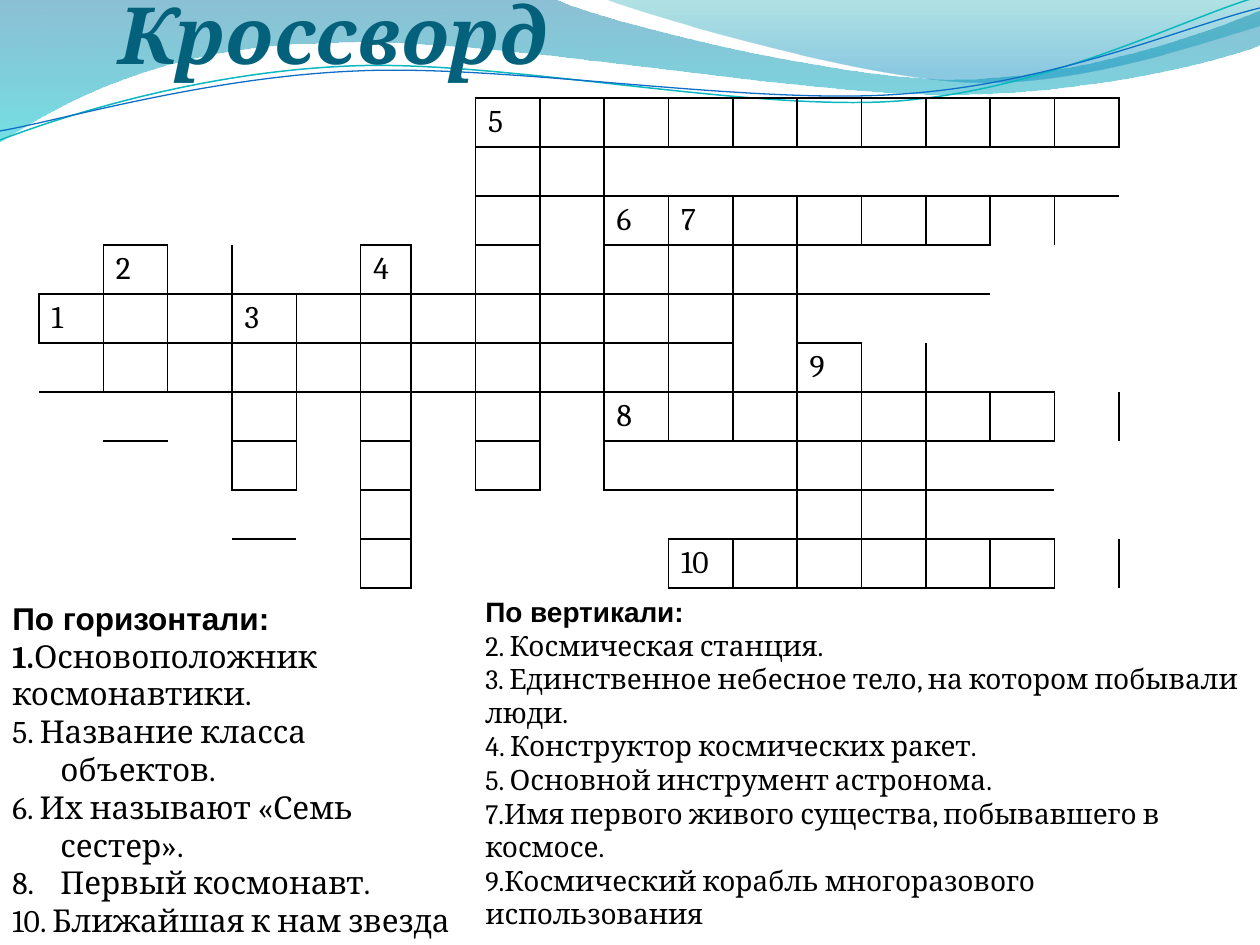
from lxml import etree
from pptx import Presentation
from pptx.dml.color import RGBColor
from pptx.enum.text import MSO_ANCHOR, MSO_AUTO_SIZE, PP_ALIGN
from pptx.oxml.ns import qn
from pptx.util import Emu, Pt

PX = 914400 / 126
BLACK = RGBColor(0x00, 0x00, 0x00)
TITLE = RGBColor(0x04, 0x61, 0x7B)
DEEP_BLUE = RGBColor(0x00, 0x74, 0xA1)
CYAN = RGBColor(0x00, 0xC6, 0xCF)
TEAL = RGBColor(0x00, 0xA1, 0xA9)
SKY = RGBColor(0x00, 0x8B, 0xBF)
LINE_TEAL = RGBColor(0x0A, 0xB8, 0xBF)
LINE_BLUE = RGBColor(0x0F, 0x6F, 0xC6)
NO_GRID_STYLE = "{2D5ABB26-0587-4C30-8999-92F81FD0307C}"

# Outlines: a segment of one point is straight, of three points a Bezier curve
BIG_WAVE = [
    [(0, 0)], [(554, -1)],
    [(600, 21), (837, 79), (955, 79)], [(1075, 79), (1207, 33), (1260, 11)],
    [(1261, 45)],
    [(1239, 55), (1096, 96), (940, 94)], [(784, 94), (481, 35), (324, 43)],
    [(163, 45), (58, 105), (-1, 142)],
]
SMALL_WAVE = [
    [(604, -1)],
    [(641, 14), (859, 78), (969, 82)], [(1079, 87), (1211, 40), (1260, 26)],
    [(1260, 0)],
]
TEAL_CURVE = [
    [(0, 140)], [(60, 117), (199, 72), (349, 66)],
    [(498, 59), (747, 112), (898, 101)], [(1050, 89), (1182, 19), (1257, -3)],
]
BLUE_CURVE = [
    [(0, 131)], [(59, 121), (207, 77), (357, 71)],
    [(508, 64), (752, 106), (903, 94)], [(1053, 84), (1186, 26), (1260, 8)],
]

# Crossword: "#" is a letter square
GRID = [
    ".......##########.",
    ".......#..........",
    ".......#.######...",
    ".#...#.#..#.......",
    "###########.......",
    ".#.#.#.#..#.#.....",
    "...#.#.#.#######..",
    "...#.#.#....#.....",
    ".....#......#.....",
    ".....#....######..",
]
NUMBERS = {(0, 7): "5", (2, 9): "6", (2, 10): "7", (3, 1): "2", (3, 5): "4",
           (4, 0): "1", (4, 3): "3", (5, 12): "9", (6, 9): "8", (9, 10): "10"}
UNEXTENDED = {(0, 17), (8, 6), (8, 7), (9, 6)}

# Clues: bold start, text, hanging indent
ACROSS = [
    ("1.", "Основоположник космонавтики.", False),
    ("", "5. Название класса объектов.", True),
    ("", "6. Их называют «Семь сестер».", True),
    ("", "8.\tПервый космонавт.", True),
    ("", "10. Ближайшая к нам звезда", False),
]
DOWN = [("", text, False) for text in (
    "2. Космическая станция.",
    "3. Единственное небесное тело, на котором побывали люди.",
    "4. Конструктор космических ракет.",
    "5. Основной инструмент астронома.",
    "7.Имя первого живого существа, побывавшего в космосе.",
    "9.Космический корабль многоразового использования",
)]


def px(n):
    return Emu(round(n * PX))


def is_square(row, col):
    return 0 <= row < len(GRID) and 0 <= col < len(GRID[0]) and GRID[row][col] == "#"


def cell_sides(row, col):
    """Sides drawn: around squares, plus the far side of blanks right of or below one."""
    def extends(r, c, dr, dc):
        return (not is_square(r, c) and is_square(r - dr, c - dc)
                and (r, c) not in UNEXTENDED)

    here = is_square(row, col)
    return {
        "L": here or is_square(row, col - 1) or extends(row, col - 1, 0, 1),
        "R": here or is_square(row, col + 1) or extends(row, col, 0, 1),
        "T": here or is_square(row - 1, col) or extends(row - 1, col, 1, 0),
        "B": here or is_square(row + 1, col) or extends(row, col, 1, 0),
    }


class SlideBuilder:
    serif, sans = "Cambria", "Arial"

    def __init__(self, slide):
        self.slide = slide

    def font(self, target, size, name=serif, color=BLACK, bold=False, italic=False):
        f = target.font
        f.size, f.name, f.bold, f.italic = Pt(size), name, bold, italic
        f.color.rgb = color

    def outline(self, segments, close):
        points = [point for seg in segments for point in seg]
        builder = self.slide.shapes.build_freeform(*points[0], scale=PX)
        builder.add_line_segments(points[1:], close=close)
        sp = builder.convert_to_shape()
        sp.shadow.inherit = False
        # Join each three-point segment into one Bezier curve
        steps = iter(list(sp._element.spPr.iter(qn("a:lnTo"))))
        for seg in segments[1:]:
            first, *rest = [next(steps) for _ in seg]
            if rest:
                curve = etree.Element(qn("a:cubicBezTo"))
                first.addprevious(curve)
                for step in (first, *rest):
                    curve.append(step[0])
                    step.getparent().remove(step)
        return sp

    def wave(self, segments, stops):
        sp = self.outline(segments, True)
        sp.line.fill.background()
        sp.fill.gradient()
        sp.fill.gradient_angle = 270
        for stop, (pos, color, _) in zip(sp.fill.gradient_stops, stops):
            stop.position = pos
            stop.color.rgb = color
        for clr, (_, _, alpha) in zip(sp._element.spPr.iter(qn("a:srgbClr")), stops):
            etree.SubElement(clr, qn("a:alpha")).set("val", str(alpha * 1000))

    def curve(self, segments, color, width):
        sp = self.outline(segments, False)
        sp.fill.background()
        sp.line.color.rgb = color
        sp.line.width = Pt(width)

    def title(self, text, x, y, w, h):
        sp = self.slide.shapes.title
        self.slide.shapes._spTree.append(sp._element)  # in front of the waves
        sp.left, sp.top, sp.width, sp.height = map(px, (x, y, w, h))
        tf = sp.text_frame
        tf.auto_size = MSO_AUTO_SIZE.NONE
        tf.vertical_anchor = MSO_ANCHOR.BOTTOM
        tf.margin_left = tf.margin_right = tf.margin_bottom = 0
        tf.text = text
        p = tf.paragraphs[0]
        p.alignment = PP_ALIGN.LEFT
        self.font(p, 45, color=TITLE, bold=True, italic=True)

    def crossword(self, x, y, widths, row_height):
        rows, cols = len(GRID), len(widths)
        table = self.slide.shapes.add_table(
            rows, cols, px(x), px(y), px(sum(widths)), px(rows * row_height)).table
        table.first_row = table.horz_banding = False
        table._tbl.tblPr[0].text = NO_GRID_STYLE
        for column, width in zip(table.columns, widths):
            column.width = px(width)
        for r, row in enumerate(table.rows):
            row.height = px(row_height)
            for c, cell in enumerate(row.cells):
                p = cell.text_frame.paragraphs[0]
                if (r, c) in NUMBERS:
                    p.text = NUMBERS[r, c]
                self.font(p, 18)
                self.borders(cell, cell_sides(r, c))
                cell.fill.background()

    def borders(self, cell, sides):
        tcPr = cell._tc.get_or_add_tcPr()
        for side, drawn in sides.items():
            ln = etree.SubElement(tcPr, qn(f"a:ln{side}"), w="12700")
            if drawn:
                fill = etree.SubElement(ln, qn("a:solidFill"))
                etree.SubElement(fill, qn("a:srgbClr"), val=str(BLACK))
            else:
                etree.SubElement(ln, qn("a:noFill"))

    def clues(self, heading, items, size, x, y, w, h):
        tf = self.slide.shapes.add_textbox(*map(px, (x, y, w, h))).text_frame
        tf.word_wrap = True
        tf.auto_size = MSO_AUTO_SIZE.SHAPE_TO_FIT_TEXT
        tf.vertical_anchor = MSO_ANCHOR.MIDDLE
        p = tf.paragraphs[0]
        p.text = heading
        self.font(p, size, self.sans, bold=True)
        for bold_start, text, hanging in items:
            p = tf.add_paragraph()
            self.font(p, size)
            if bold_start:
                r = p.add_run()
                r.text = bold_start
                r.font.bold = True
            p.add_run().text = text
            if hanging:
                pPr = p._p.get_or_add_pPr()
                pPr.set("marL", str(px(48)))
                pPr.set("indent", str(-px(48)))


def main():
    prs = Presentation()
    prs.slide_width, prs.slide_height = px(1260), px(945)
    s = SlideBuilder(prs.slides.add_slide(prs.slide_layouts[5]))

    # Waves along the top
    s.wave(BIG_WAVE, [(0, DEEP_BLUE, 45), (1, CYAN, 55)])
    s.wave(SMALL_WAVE, [(0, TEAL, 30), (0.8, SKY, 45)])
    s.curve(TEAL_CURVE, LINE_TEAL, 0.85)
    s.curve(BLUE_CURVE, LINE_BLUE, 0.75)

    # Title, crossword and clues
    s.title("Кроссворд", 118, 20, 547, 60)
    s.crossword(39, 98, [50.4 if c == 5 else 64.35 for c in range(18)], 49)
    s.clues("По горизонтали:", ACROSS, 18, 0, 610, 464, 318)
    s.clues("По вертикали:", DOWN, 16, 473, 620, 788, 285)
    prs.save("out.pptx")


if __name__ == "__main__":
    main()
